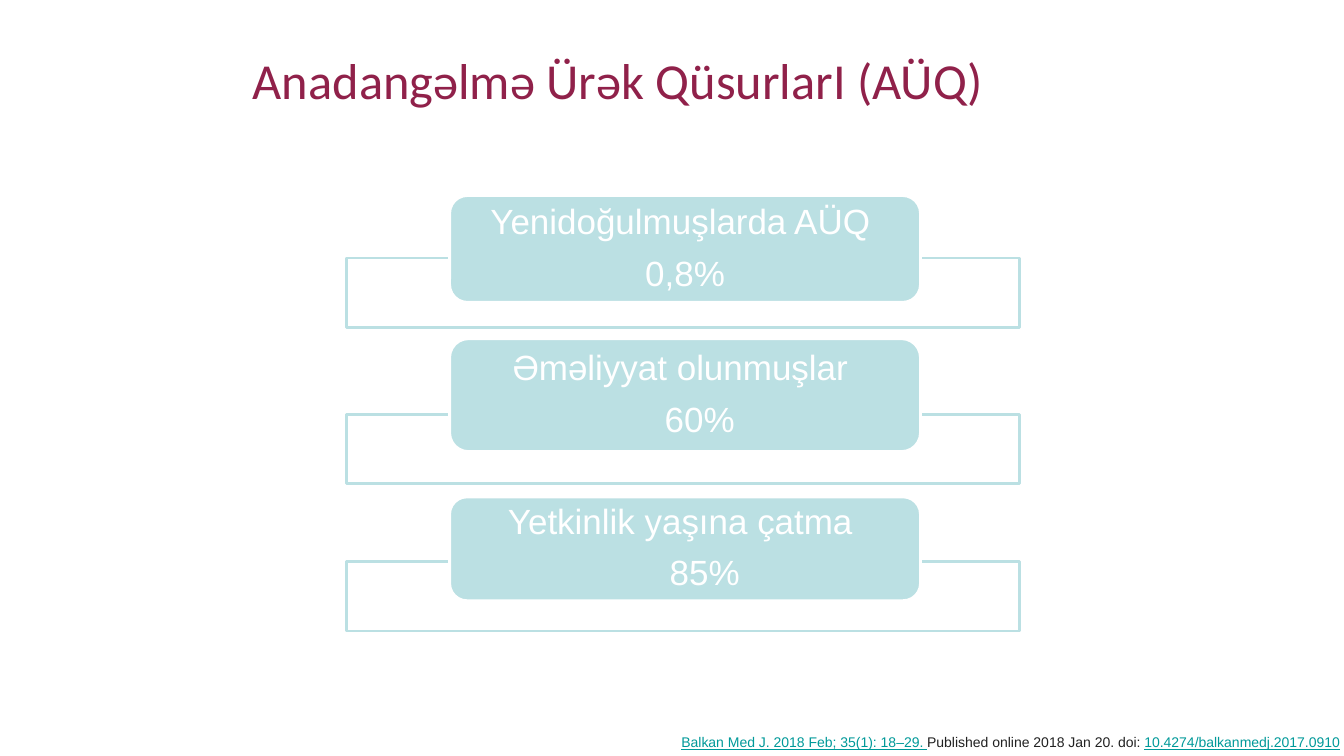
from pptx import Presentation
from pptx.dml.color import RGBColor
from pptx.enum.shapes import MSO_SHAPE as Kind
from pptx.enum.text import MSO_ANCHOR as Anchor, PP_ALIGN as Align
from pptx.util import Inches, Pt

TEAL, WHITE, LINK = "BBE0E3", "FFFFFF", "009999"
STEPS = [
    (2.56, 1.94, 1.06, "Yenidoğulmuşlarda AÜQ ", "0,8%", 0),
    (4.11, 3.36, 1.12, "Əməliyyat olunmuşlar ", "60%", 0.29),
    (5.57, 4.93, 1.03, "Yetkinlik yaşına çatma ", "85%", 0.39),
]
CITE = [
    ("Balkan Med J. 2018 Feb; 35(1): 18–29.\u00a0", LINK, True),
    ("Published online 2018 Jan 20.\u00a0doi:\u00a0", "212121", False),
    ("10.4274/balkanmedj.2017.0910", LINK, True),
]


def color(code):
    """Turn a hex string into a colour."""
    return RGBColor.from_string(code)


def apply(item, values):
    """Set each named value on an item."""
    for name, value in values.items():
        setattr(item, name, value)


def add_run(para, text, code, **style):
    """Add a styled run to a paragraph."""
    run = para.add_run()
    run.text = text
    apply(run.font, style)
    run.font.color.rgb = color(code)


def add_text(slide, area, anchor):
    """Add a wrapping text box and return its frame."""
    frame = slide.shapes.add_textbox(*map(Inches, area)).text_frame
    apply(frame, {"word_wrap": True, "vertical_anchor": anchor})
    return frame


def add_box(slide, kind, area, fill, line):
    """Add a filled and outlined box."""
    box = slide.shapes.add_shape(kind, *map(Inches, area))
    box.shadow.inherit = False
    box.fill.solid()
    box.fill.fore_color.rgb = color(fill)
    box.line.color.rgb = color(line)
    box.line.width = Pt(2)
    return box


def add_step(slide, low, top, height, label, share, shift):
    """Add a frame with a label box over its upper edge."""
    add_box(slide, Kind.RECTANGLE, (3.44, low, 6.67, 0.69), WHITE, TEAL)
    area = (4.46, top, 4.67, height)
    frame = add_box(slide, Kind.ROUNDED_RECTANGLE, area, TEAL, WHITE).text_frame
    apply(frame, {
        "word_wrap": True, "vertical_anchor": Anchor.MIDDLE,
        "margin_left": Inches(0.18), "margin_right": Inches(0.18),
        "margin_top": 0, "margin_bottom": 0,
    })
    first, last = frame.paragraphs[0], frame.add_paragraph()
    for para, text in ((first, label), (last, share)):
        apply(para, {"alignment": Align.CENTER, "line_spacing": 0.9,
                     "space_after": Pt(9.8)})
        add_run(para, text, WHITE, name="Arial", size=Pt(25))
    last._p.get_or_add_pPr().set("marL", str(Inches(shift)))


def main():
    """Build the slide and save it."""
    deck = Presentation()
    apply(deck, {"slide_width": Inches(13.33), "slide_height": Inches(7.5)})
    slide = deck.slides.add_slide(deck.slide_layouts[6])
    title = add_text(slide, (2.41, 0.21, 8.5, 1.16), Anchor.MIDDLE)
    add_run(title.paragraphs[0], "Anadangəlmə Ürək QüsurlarI (AÜQ)", "90214A",
            name="Calibri", size=Pt(36))
    for step in STEPS:
        add_step(slide, *step)
    cite = add_text(slide, (6.66, 7.23, 6.67, 0.27), Anchor.TOP)
    cite.margin_right = 0
    for text, code, line in CITE:
        add_run(cite.paragraphs[0], text, code, name="Arial", size=Pt(10),
                underline=line)
    deck.save("out.pptx")


if __name__ == "__main__":
    main()
